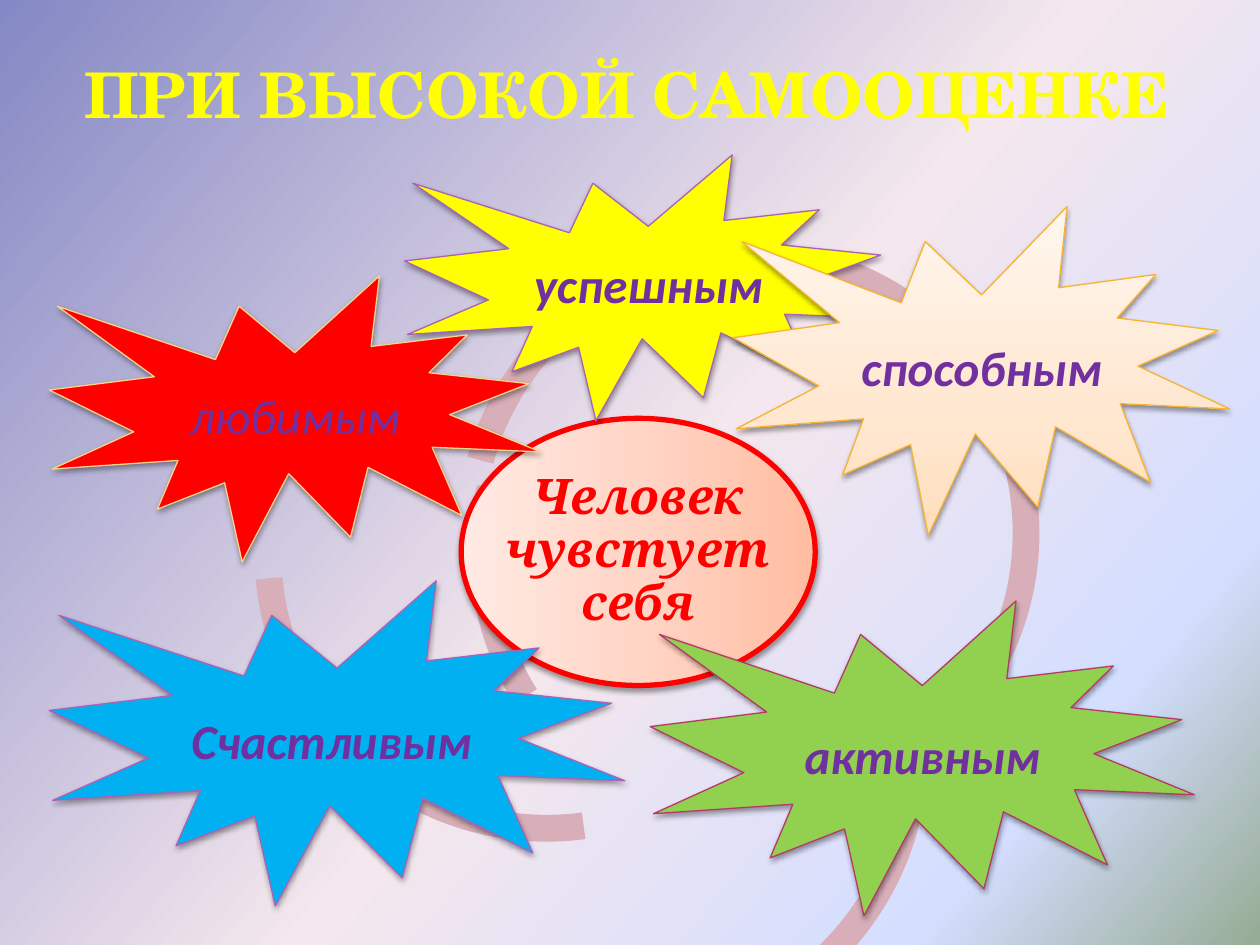
from lxml import etree
from pptx import Presentation
from pptx import util as u
from pptx.dml.color import RGBColor
from pptx.enum import shapes, text
from pptx.oxml import ns

KIND = shapes.MSO_SHAPE


def rgb(code):
    return RGBColor.from_string(code)


def node(parent, tag, **attrs):
    item = etree.SubElement(parent, ns.qn("a:" + tag))
    for key, val in attrs.items():
        item.set(key, str(val))
    return item


def paint(fill, color):
    """Fill with a hex string, or with (clockwise angle, stops)."""
    if isinstance(color, str):
        fill.solid()
        fill.fore_color.rgb = rgb(color)
        return
    angle, stops = color
    fill.gradient()
    fill.gradient_angle = 360 - angle
    holder = fill.gradient_stops[0]._gs.getparent()
    for old in list(holder):
        holder.remove(old)
    for pos, code in stops:
        stop = node(holder, "gs", pos=pos * 1000)
        node(stop, "srgbClr", val=code)


def write(frame, words, size=28, font="Calibri", color="7030A0", bold=True,
          italic=True, align=text.PP_ALIGN.CENTER, space=0.9, edge=None):
    par = frame.paragraphs[0]
    par.alignment = align
    par.line_spacing = space
    run = par.add_run()
    run.text = words
    face = run.font
    face.size, face.name = u.Pt(size), font
    face.bold, face.italic = bold, italic
    face.color.rgb = rgb(color)
    if edge:
        line = etree.Element(ns.qn("a:ln"), w=str(u.Pt(0.71)))
        node(node(line, "solidFill"), "srgbClr", val=edge)
        run._r.get_or_add_rPr().insert(0, line)


class Deck:
    def __init__(self, width, height):
        self.prs = Presentation()
        self.prs.slide_width = u.Inches(width)
        self.prs.slide_height = u.Inches(height)
        self.slide = self.prs.slides.add_slide(self.prs.slide_layouts[6])

    def back(self, color):
        paint(self.slide.background.fill, color)

    def shape(self, kind, box, color):
        item = self.slide.shapes.add_shape(kind, *map(u.Inches, box))
        item.shadow.inherit = False
        paint(item.fill, color)
        return item

    def arc(self, box, start, end, thick):
        item = self.shape(KIND.BLOCK_ARC, box, "D8AFB9")
        item.line.fill.background()
        # angles are stored in 1/60000 degree, adjustments in 1/100000
        item.adjustments[0] = start * 0.6
        item.adjustments[1] = end * 0.6
        item.adjustments[2] = thick

    def label(self, box, words, inset=0.04, anchor=text.MSO_ANCHOR.MIDDLE,
              **style):
        frame = self.slide.shapes.add_textbox(*map(u.Inches, box)).text_frame
        frame.word_wrap = True
        frame.vertical_anchor = anchor
        frame.margin_left = frame.margin_right = u.Inches(inset)
        frame.margin_top = frame.margin_bottom = u.Inches(min(inset, 0.05))
        write(frame, words, **style)

    def bubble(self, kind, box, fill, edge, words, weight=0.75, **style):
        item = self.shape(kind, box, fill)
        item.line.color.rgb = rgb(edge)
        item.line.width = u.Pt(weight)
        effects = item._element.spPr.find(ns.qn("a:effectLst"))
        cast = node(effects, "outerShdw", blurRad=u.Pt(3.1), dist=u.Pt(1.6),
                    dir=90 * 60000, rotWithShape=0)
        node(node(cast, "srgbClr", val="000000"), "alpha", val=38000)
        self.label(box, words, **style)

    def save(self):
        self.prs.save("out.pptx")


def main():
    deck = Deck(10, 7.5)
    deck.back((40, [(0, "8488C4"), (53, "F4E7ED"), (83, "D4DEFF"),
                    (100, "96AB94")]))

    # Ring of arcs: left, top, diameter, start, end, thickness
    for left, top, size, start, end, thick in [
        (2.02, 2.08, 4.62, 124.93, 174.79, 0.046),
        (2.03, 2.06, 4.62, 82.38, 124.64, 0.046),
        (2.62, 3.58, 4.75, 0.85, 108.85, 0.045),
        (3.63, 1.92, 4.62, 195.19, 31.4, 0.046),
        (3.73, 2.05, 4.62, 148.03, 192.76, 0.046),
    ]:
        deck.arc((left, top, size, size), start, end, thick)

    # Centre
    rose = (180, [(0, "FFBDA1"), (50, "FFD5C6"), (100, "FFEAE3")])
    deck.bubble(KIND.OVAL, (3.66, 3.32, 2.81, 2.12), rose, "FF0000",
                "Человек чувстует себя", weight=3, font="Cambria",
                color="FF0000")

    # Bursts around the centre
    cream = (270, [(0, "FFDEBC"), (35, "FFE7D0"), (100, "FFF6ED")])
    for box, fill, edge, words, bold in [
        ((3.21, 1.23, 3.87, 2.11), "FFFF00", "AA62B9", "успешным", True),
        ((5.82, 1.64, 3.94, 2.61), cream, "F8B333", "способным", True),
        ((5.16, 4.77, 4.32, 2.5), "92D050", "B73965", "активным", True),
        ((0.39, 4.61, 4.57, 2.58), "00B0F0", "AA62B9", "Счастливым ", True),
        ((0.39, 2.19, 3.9, 2.27), "FF0000", "FBD388", "любимым", False),
    ]:
        deck.bubble(KIND.EXPLOSION1, box, fill, edge, words, bold=bold)

    # Title
    deck.label((0.57, 0.39, 8.86, 0.71), "ПРИ ВЫСОКОЙ САМООЦЕНКЕ", inset=0.1,
               anchor=text.MSO_ANCHOR.TOP, size=36, font="TeX Gyre Schola",
               color="FFFF00", italic=False, align=text.PP_ALIGN.LEFT,
               space=1.0, edge="C68B1C")
    deck.save()


if __name__ == "__main__":
    main()
